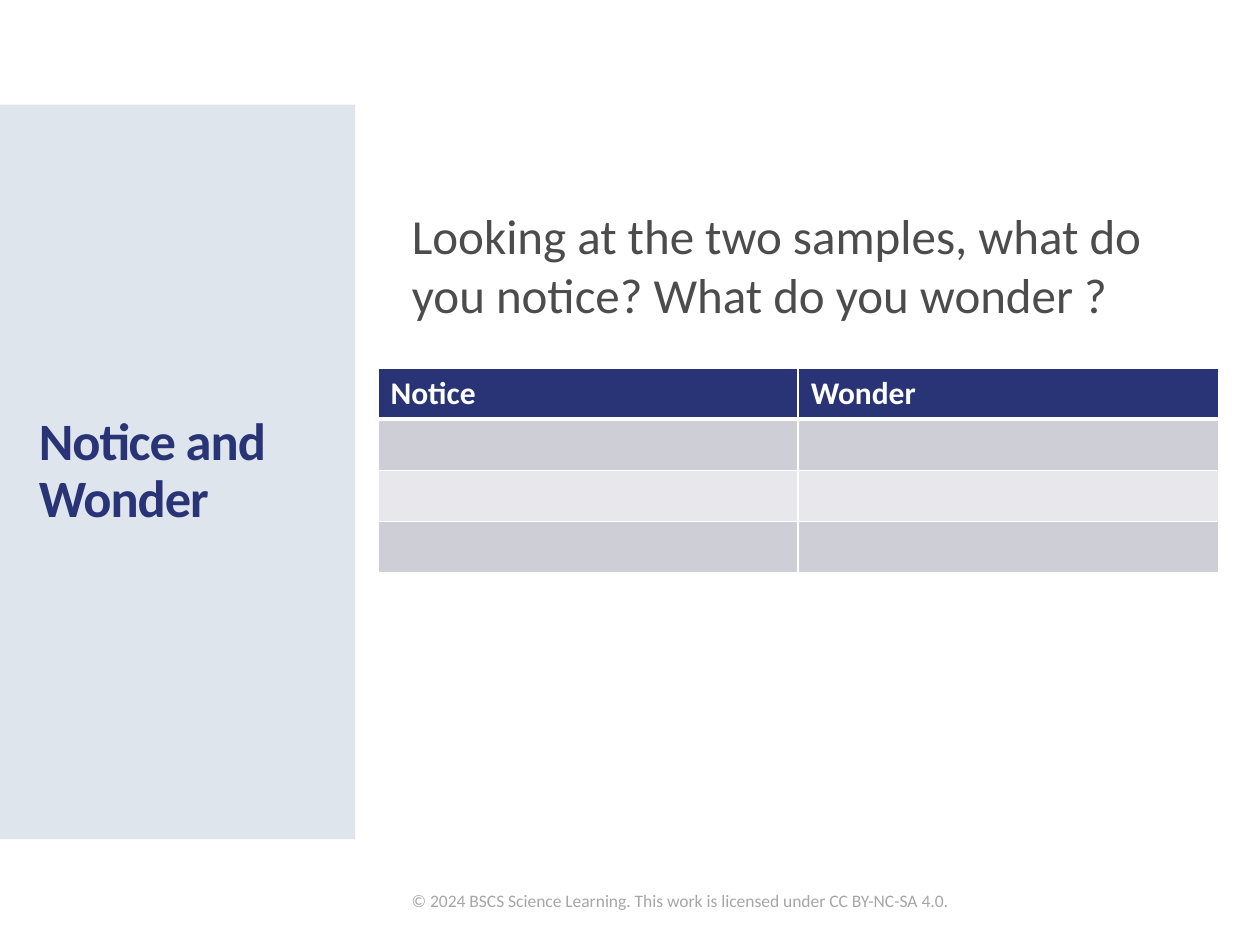
from lxml.etree import SubElement
from pptx import Presentation
from pptx.dml.color import RGBColor
from pptx.enum.shapes import MSO_SHAPE
from pptx.enum.text import MSO_ANCHOR, MSO_AUTO_SIZE, PP_ALIGN
from pptx.oxml.ns import qn
from pptx.util import Cm, Pt

COLORS = {
    "panel": "DFE5ED",
    "navy": "293476",
    "text": "4C4C4C",
    "footer": "A6A6A6",
    "white": "FFFFFF",
    "band_dark": "CDCED6",
    "band_light": "E8E8EC",
}
FONT = "Calibri"


def rgb(name):
    return RGBColor.from_string(COLORS[name])


def place(sp, box):
    sp.left, sp.top, sp.width, sp.height = (Cm(v) for v in box)


def add_run(p, text, size, color, bold=False):
    r = p.add_run()
    r.text = text
    r.font.name = FONT
    r.font.size = Pt(size)
    r.font.bold = bold
    r.font.color.rgb = rgb(color)
    return r


def set_frame(tf, anchor):
    tf.word_wrap = True
    tf.auto_size = MSO_AUTO_SIZE.NONE
    tf.vertical_anchor = anchor


def set_borders(cell, widths):
    tc_pr = cell._tc.get_or_add_tcPr()
    for side, width in zip("LRTB", widths):
        ln = SubElement(tc_pr, qn(f"a:ln{side}"), w=str(Pt(width)))
        fill = SubElement(ln, qn("a:solidFill"))
        SubElement(fill, qn("a:srgbClr"), val=COLORS["white"])


def add_side_panel(s, box, text):
    left, top, width, height = box
    panel = s.shapes.add_shape(MSO_SHAPE.RECTANGLE, *(Cm(v) for v in box))
    panel.shadow.inherit = False
    panel.fill.solid()
    panel.fill.fore_color.rgb = rgb("panel")
    panel.line.fill.background()

    # Title sits in front of the panel
    title = s.shapes.title
    title._element.addprevious(panel._element)
    place(title, (left + 0.53, top + 1.01, width - 1.01, height - 2.03))
    set_frame(title.text_frame, MSO_ANCHOR.MIDDLE)
    p = title.text_frame.paragraphs[0]
    p.alignment = PP_ALIGN.LEFT
    p.line_spacing = 0.9
    r = add_run(p, text, 30, "navy", bold=True)
    r.font._element.set("spc", "-60")


def add_question(s, box, text):
    body = s.placeholders[1]
    place(body, box)
    tf = body.text_frame
    set_frame(tf, MSO_ANCHOR.TOP)
    tf.margin_top = Cm(1.75)
    p = tf.paragraphs[0]
    p_pr = p._p.get_or_add_pPr()
    p_pr.set("marL", "0")
    p_pr.set("indent", "0")
    SubElement(p_pr, qn("a:buNone"))
    p.space_before = Pt(0)
    add_run(p, text, 28, "text")


def add_notes_table(s, box, headings, blank_rows):
    rows, cols = blank_rows + 1, len(headings)
    table = s.shapes.add_table(rows, cols, *(Cm(v) for v in box)).table
    for i in range(rows):
        fill = "navy" if i == 0 else ("band_light", "band_dark")[i % 2]
        top, bottom = (3 if i == 1 else 1), (3 if i == 0 else 1)
        for j, heading in enumerate(headings):
            cell = table.cell(i, j)
            set_borders(cell, (1, 1, top, bottom))
            cell.fill.solid()
            cell.fill.fore_color.rgb = rgb(fill)
            p = cell.text_frame.paragraphs[0]
            if i == 0:
                add_run(p, heading, 18, "white", bold=True)
            else:
                p.font.size = Pt(18)


def add_footer(s, box, text):
    tf = s.shapes.add_textbox(*(Cm(v) for v in box)).text_frame
    set_frame(tf, MSO_ANCHOR.MIDDLE)
    add_run(tf.paragraphs[0], text, 10, "footer")


def main():
    prs = Presentation()
    prs.slide_width, prs.slide_height = Cm(25.4), Cm(19.05)
    s = prs.slides.add_slide(prs.slide_layouts[1])

    add_side_panel(s, (0, 2.11, 7.16, 14.81), "Notice and Wonder")
    add_question(s, (8.05, 2.39, 15.24, 14.22),
                 "Looking at the two samples, what do you notice? "
                 "What do you wonder ?")
    add_notes_table(s, (7.62, 7.42, 16.94, 4.12), ("Notice", "Wonder"), 3)
    add_footer(s, (8.05, 17.65, 12.32, 1.02),
               "© 2024 BSCS Science Learning. "
               "This work is licensed under CC BY-NC-SA 4.0.")

    prs.save("out.pptx")


if __name__ == "__main__":
    main()
